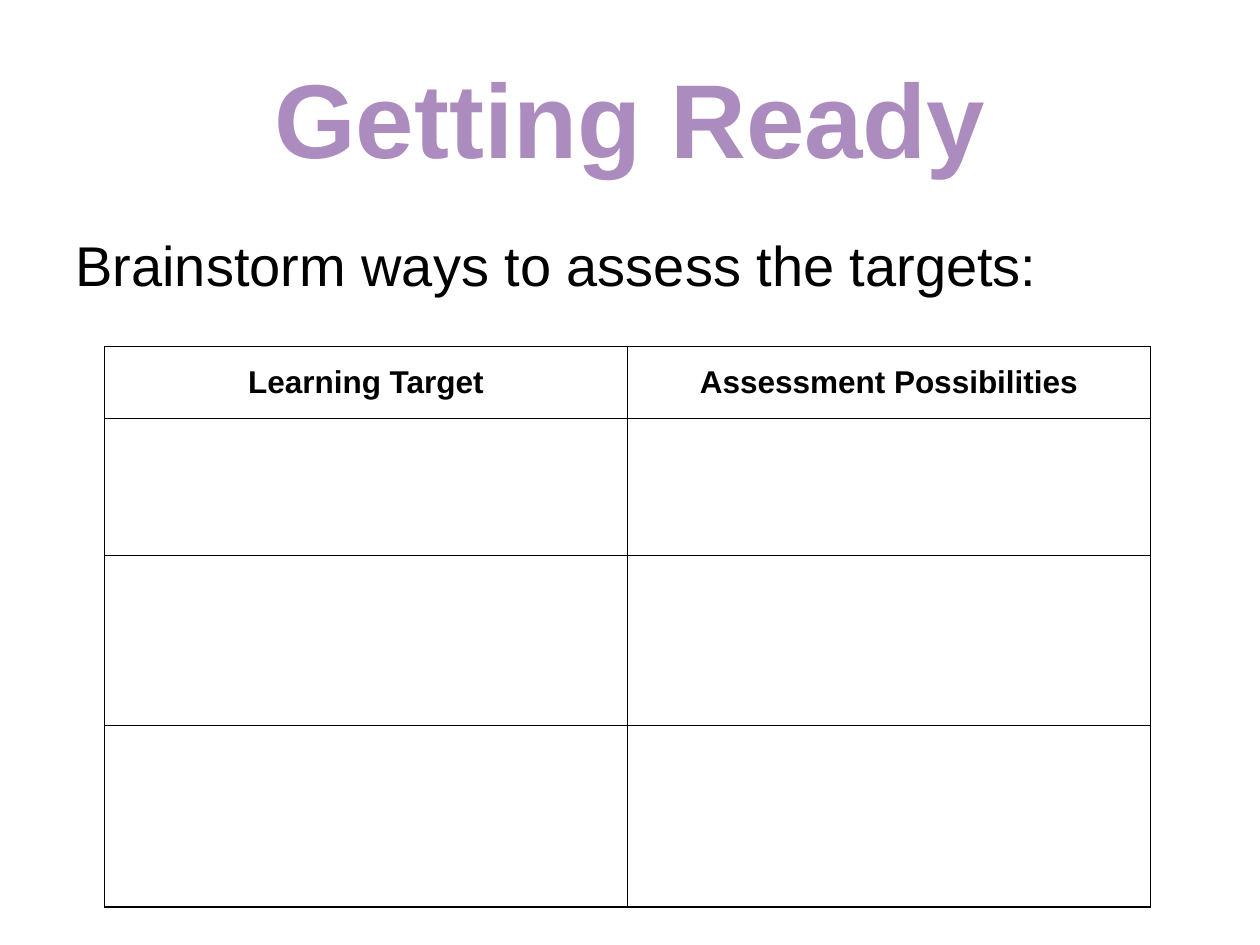
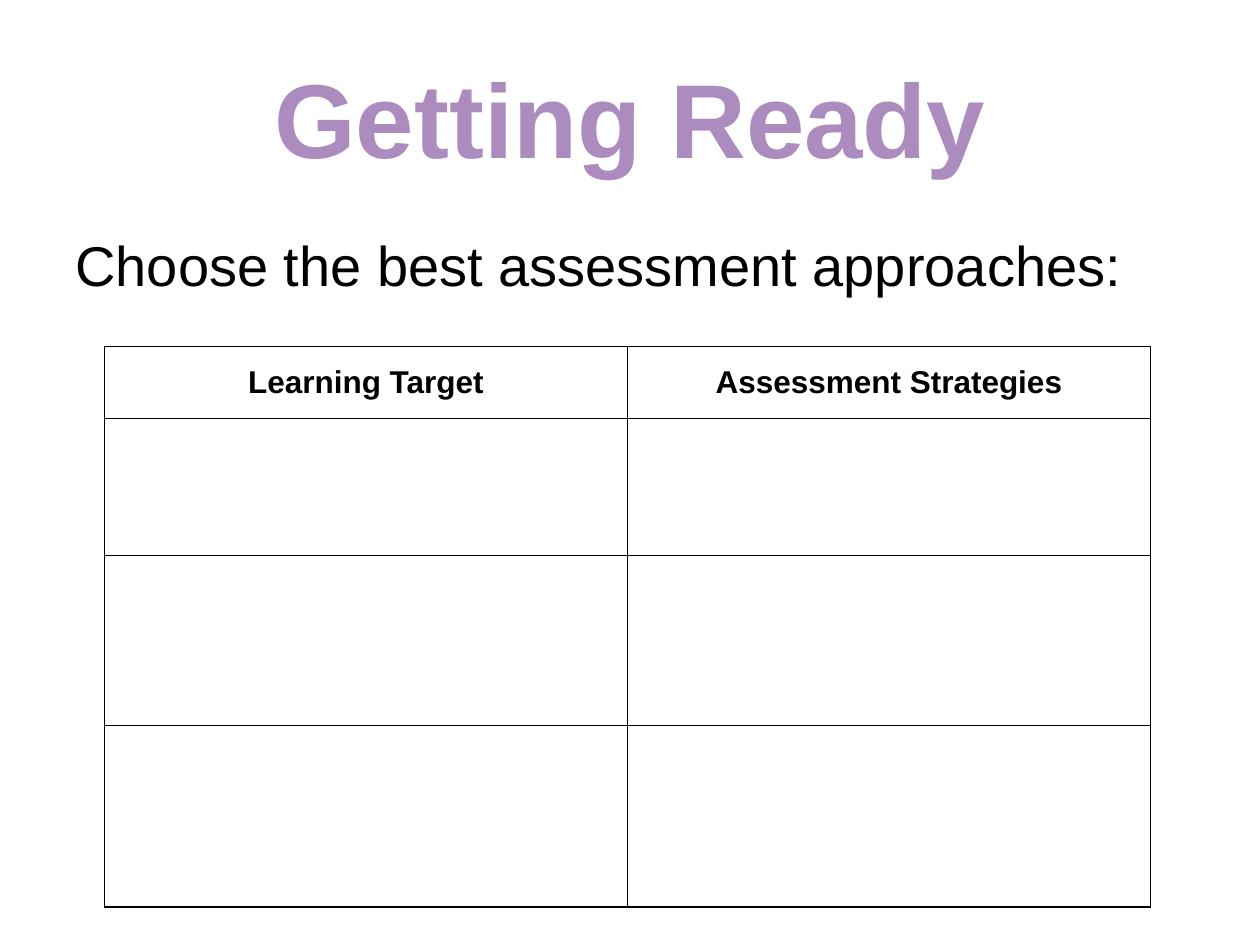
from lxml.etree import SubElement
from pptx import Presentation
from pptx.dml.color import RGBColor
from pptx.enum.text import MSO_ANCHOR as Anchor, PP_ALIGN as Align
from pptx.oxml.ns import qn
from pptx.util import Inches, Pt

PURPLE, BLACK, WHITE = "AC8CBE", "000000", "FFFFFF"
TITLE = {"size": Pt(60), "bold": True}
PROMPT = {"size": Pt(32), "bold": False}
HEADING = {"size": Pt(18), "bold": True}
COLUMN_WIDTH = 4.15
ROW_HEIGHTS = [0.57, 1.09, 1.35, 1.44]
SLIDES = [
    ("Brainstorm ways to assess the targets:", "Assessment Possibilities"),
    ("Choose the best assessment approaches:", "Assessment Strategies"),
]


def color(value):
    return RGBColor.from_string(value)


class Deck:
    font = "Arial"

    def __init__(self):
        self.deck = Presentation()
        self.deck.slide_width, self.deck.slide_height = Inches(10), Inches(7.5)

    def add_page(self):
        self.page = self.deck.slides.add_slide(self.deck.slide_layouts[6])
        fill = self.page.background.fill
        fill.solid()
        fill.fore_color.rgb = color(WHITE)

    def add_text(self, frame, text, style, ink=BLACK, align=Align.CENTER):
        para = frame.paragraphs[0]
        para.alignment = align
        span = para.add_run()
        span.text = text
        for name, value in {"name": self.font, **style}.items():
            setattr(span.font, name, value)
        span.font.color.rgb = color(ink)

    def add_box(self, top, height, anchor, inset=0.05):
        box = self.page.shapes.add_textbox(
            Inches(0.5), Inches(top), Inches(9), Inches(height))
        frame = box.text_frame
        settings = {"word_wrap": True, "vertical_anchor": anchor,
                    "margin_top": Inches(inset)}
        for name, value in settings.items():
            setattr(frame, name, value)
        return frame

    def add_title(self, text):
        self.add_text(self.add_box(0.3, 1.25, Anchor.MIDDLE), text, TITLE, PURPLE)

    def add_prompt(self, text):
        frame = self.add_box(1.75, 0.75, Anchor.TOP, inset=0.08)
        self.add_text(frame, text, PROMPT, align=Align.LEFT)

    def add_borders(self, cell):
        properties = cell._tc.get_or_add_tcPr()
        for position, side in enumerate(("lnL", "lnR", "lnT", "lnB")):
            line = SubElement(properties, qn(f"a:{side}"), w=str(Pt(1)))
            fill = SubElement(line, qn("a:solidFill"))
            SubElement(fill, qn("a:srgbClr"), val=BLACK)
            properties.insert(position, line)

    def add_worksheet(self, headings):
        table = self.page.shapes.add_table(
            len(ROW_HEIGHTS), len(headings), Inches(0.83), Inches(2.75),
            Inches(COLUMN_WIDTH * len(headings)), Inches(sum(ROW_HEIGHTS))).table
        table.first_row = table.horz_banding = False
        for column in table.columns:
            column.width = Inches(COLUMN_WIDTH)
        for row, height in zip(table.rows, ROW_HEIGHTS):
            row.height = Inches(height)
        for cell in table.iter_cells():
            cell.fill.background()
            self.add_borders(cell)
        for cell, heading in zip(table.rows[0].cells, headings):
            cell.vertical_anchor = Anchor.MIDDLE
            self.add_text(cell.text_frame, heading, HEADING)


def main():
    builder = Deck()
    for prompt, assessment in SLIDES:
        builder.add_page()
        builder.add_title("Getting Ready")
        builder.add_prompt(prompt)
        builder.add_worksheet(["Learning Target", assessment])
    builder.deck.save("out.pptx")


if __name__ == "__main__":
    main()
